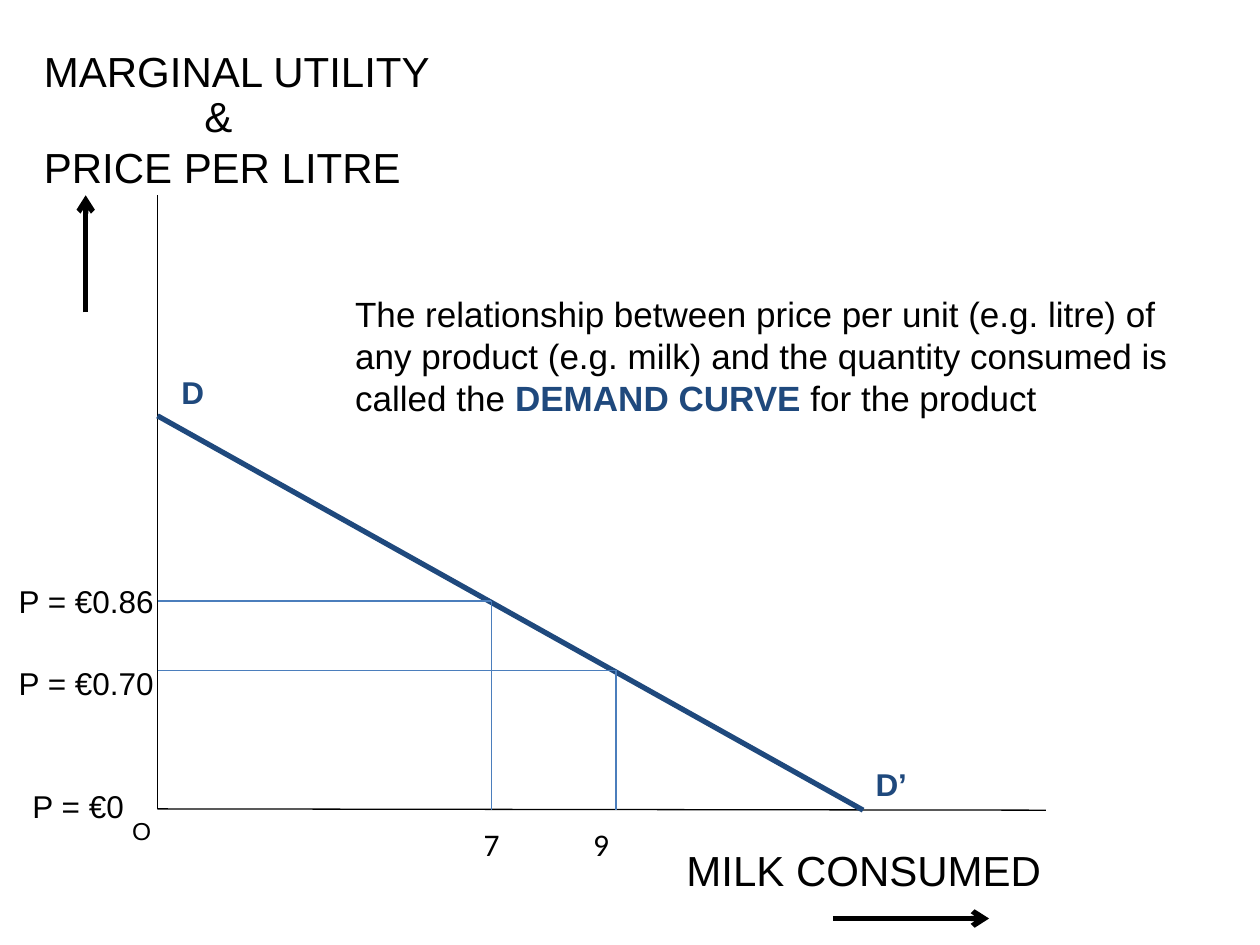
from lxml import etree
from pptx import Presentation
from pptx.dml.color import RGBColor
from pptx.enum import shapes, text
from pptx.oxml.ns import qn
from pptx.util import Inches, Pt

BLACK = RGBColor(0, 0, 0)
NAVY = RGBColor(0x1F, 0x49, 0x7D)
BLUE = RGBColor(0x4B, 0x7E, 0xBC)

deck = Presentation()
deck.slide_width, deck.slide_height = Inches(10), Inches(7.5)
slide = deck.slides.add_slide(deck.slide_layouts[6])


def line(start, end, color, width=0.75, arrow=False):
    ends = [Inches(v) for v in (*start, *end)]
    link = slide.shapes.add_connector(shapes.MSO_CONNECTOR.STRAIGHT, *ends)
    link.line.color.rgb = color
    link.line.width = Pt(width)
    if arrow:
        etree.SubElement(link.line._get_or_add_ln(), qn("a:tailEnd"), type="arrow")
    etree.SubElement(link._element.spPr, qn("a:effectLst"))


def label(box, paras, size, wrap=False, font="Arial"):
    """Each paragraph is a list of (words, color, bold) runs."""
    frame = slide.shapes.add_textbox(*map(Inches, box)).text_frame
    frame.word_wrap = wrap
    frame.auto_size = text.MSO_AUTO_SIZE.SHAPE_TO_FIT_TEXT
    for i, runs in enumerate(paras):
        para = frame.add_paragraph() if i else frame.paragraphs[0]
        for words, color, bold in runs:
            run = para.add_run()
            run.text = words
            run.font.name, run.font.size = font, Pt(size)
            run.font.bold, run.font.color.rgb = bold, color
    return frame


# Axes, with the direction arrows beside them
left, base = 1.25, 6.43
zero = (left, 6.42)
line(zero, (8.3, base), BLACK)
line(zero, (left, 1.55), BLACK)
line((6.61, 7.29), (7.85, 7.29), BLACK, 3, True)
line((0.68, 2.48), (0.68, 1.55), BLACK, 3, True)

# Demand curve and the guides from its two points to the axes
line((left, 3.3), (6.85, base), NAVY, 3)
for x, y in ((3.9, 4.77), (4.89, 5.32)):
    line((left, y), (x, y), BLUE)
    line((x, y), (x, base), BLUE)

# Axis titles
label((0.25, 0.31, 4.65, 0.5), [[("MARGINAL UTILITY", BLACK, False)]], 24, True)
title = label((0.25, 0.67, 3.06, 0.91),
              [[("& ", BLACK, False)], [("PRICE PER LITRE", BLACK, False)]], 24)
title.paragraphs[0].alignment = text.PP_ALIGN.CENTER
label((5.35, 6.65, 4.14, 0.5), [[("MILK CONSUMED", BLACK, False)]], 24, True)

# Prices, quantities, origin and curve ends
for words, x, y, width in (("P = €0.86", 0.05, 4.57, 1.28),
                           ("P = €0.70", 0.05, 5.22, 1.39),
                           ("P = €0", 0.16, 6.2, 0.93)):
    label((x, y, width, 0.4), [[(words, BLACK, False)]], 18)
for words, x in (("7", 3.74), ("9", 4.61)):
    label((x, 6.5, 0.33, 0.4), [[(words, BLACK, False)]], 18, font="Calibri")
label((0.95, 6.43, 0.35, 0.34), [[("O", BLACK, False)]], 14)
for words, x, y, width in (("D", 1.34, 2.91, 0.38), ("D’", 6.85, 6.02, 0.45)):
    label((x, y, width, 0.4), [[(words, NAVY, True)]], 18)

# Definition
label((2.72, 2.27, 6.65, 1.11), [[
    ("The relationship between price per unit (e.g. litre) of any product "
     "(e.g. milk) and the quantity consumed is called the ", BLACK, False),
    ("DEMAND CURVE", NAVY, True),
    (" for the product", BLACK, False),
]], 20, True)

deck.save("out.pptx")
